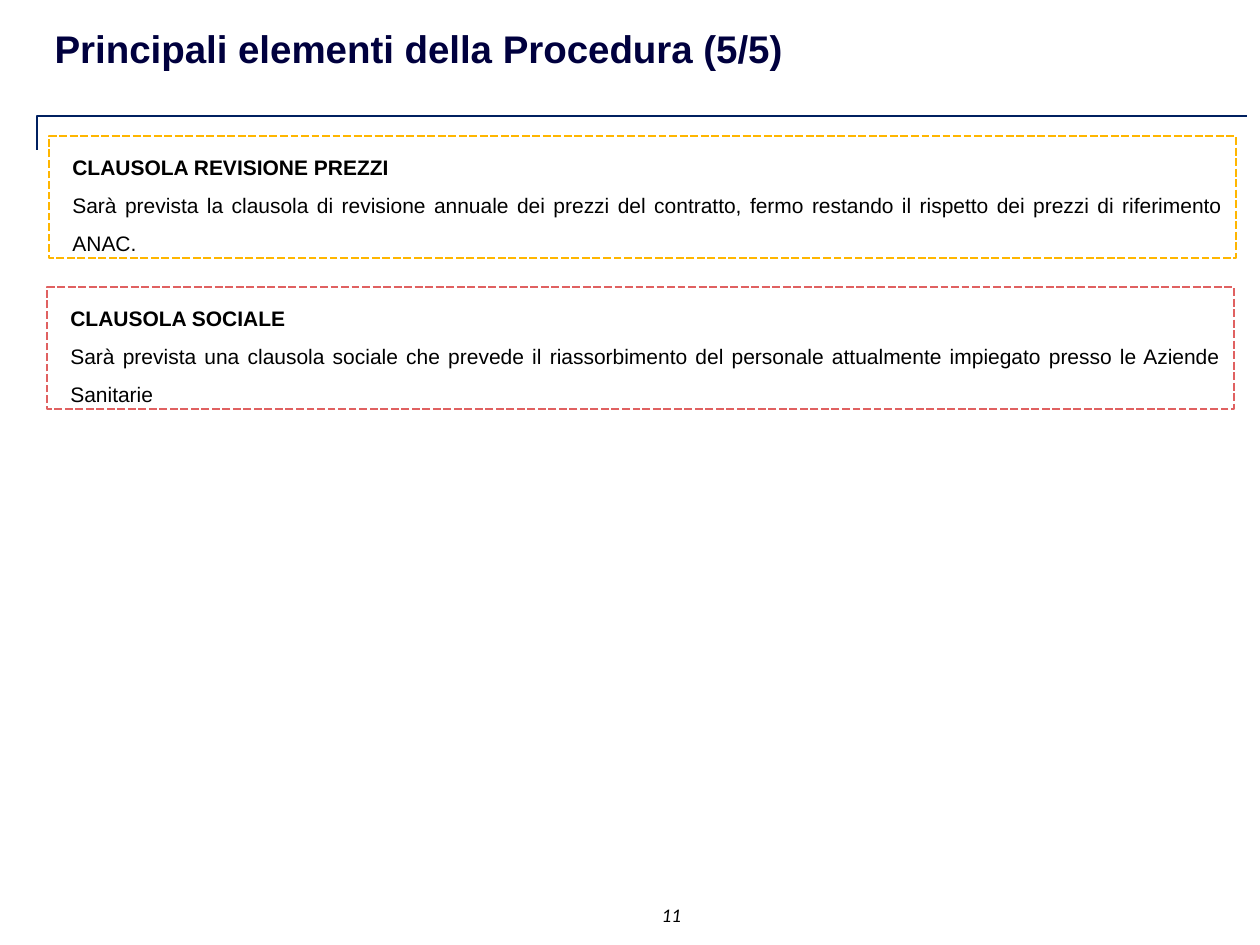
"""Build the slide on the price revision and social clauses of the procedure."""
from dataclasses import dataclass

from pptx import Presentation
from pptx.dml.color import RGBColor
from pptx.enum.dml import MSO_LINE
from pptx.enum.shapes import MSO_SHAPE
from pptx.enum.text import MSO_ANCHOR, MSO_AUTO_SIZE, PP_ALIGN
from pptx.util import Emu, Pt

PX_PER_INCH = 126


@dataclass(frozen=True)
class Theme:
    title: str = "00003E"
    text: str = "000000"
    rule: str = "002060"
    price: str = "FFB600"
    social: str = "E06161"
    title_size: int = 22
    body_size: int = 12
    number_size: int = 11
    body_font: str = "Arial"
    number_font: str = "Calibri"


THEME = Theme()


def px(length):
    return Emu(round(length * 914400 / PX_PER_INCH))


def place(shape, left, top, width, height):
    shape.left, shape.top = px(left), px(top)
    shape.width, shape.height = px(width), px(height)


def format_font(font, name, size, color, bold=False, italic=False):
    font.name, font.size = name, Pt(size)
    font.bold, font.italic = bold, italic
    font.color.rgb = RGBColor.from_string(color)


def add_title(slide, text):
    title = slide.shapes.title
    place(title, 42, 19, 764, 59)
    frame = title.text_frame
    frame.text = text
    frame.word_wrap = False
    frame.auto_size = MSO_AUTO_SIZE.NONE
    frame.vertical_anchor = MSO_ANCHOR.TOP
    paragraph = frame.paragraphs[0]
    paragraph.alignment = PP_ALIGN.LEFT
    format_font(paragraph.runs[0].font, THEME.body_font, THEME.title_size, THEME.title, bold=True)


def add_corner_rule(slide):
    builder = slide.shapes.build_freeform(px(37), px(150))
    builder.add_line_segments([(px(37), px(116)), (px(1247), px(116))], close=False)
    rule = builder.convert_to_shape()
    rule.shadow.inherit = False
    rule.fill.background()
    rule.line.color.rgb = RGBColor.from_string(THEME.rule)
    rule.line.width = Pt(1)


def add_clause(slide, left, top, color, heading, body):
    box = slide.shapes.add_shape(MSO_SHAPE.RECTANGLE, px(left), px(top), px(1187), px(122))
    box.shadow.inherit = False
    box.fill.background()
    box.line.color.rgb = RGBColor.from_string(color)
    box.line.width = Pt(1.5)
    box.line.dash_style = MSO_LINE.SQUARE_DOT
    frame = box.text_frame
    frame.text = f"{heading}\n{body}"
    frame.word_wrap = True
    frame.vertical_anchor = MSO_ANCHOR.TOP
    for paragraph, bold in zip(frame.paragraphs, (True, False)):
        paragraph.alignment = PP_ALIGN.JUSTIFY
        paragraph.line_spacing = 1.5
        paragraph._p.get_or_add_pPr().set("marL", str(px(11)))
        format_font(paragraph.runs[0].font, THEME.body_font, THEME.body_size, THEME.text, bold)


def add_page_number(slide, text):
    frame = slide.shapes.add_textbox(px(635), px(903), px(73), px(24)).text_frame
    frame.margin_left = frame.margin_right = frame.margin_top = frame.margin_bottom = 0
    frame.word_wrap = True
    frame.text = text
    paragraph = frame.paragraphs[0]
    paragraph.alignment = PP_ALIGN.CENTER
    format_font(paragraph.runs[0].font, THEME.number_font, THEME.number_size, THEME.text, italic=True)


def main():
    presentation = Presentation()
    presentation.slide_width, presentation.slide_height = px(1260), px(945)
    slide = presentation.slides.add_slide(presentation.slide_layouts[5])
    add_title(slide, "Principali elementi della Procedura (5/5)")
    add_corner_rule(slide)
    add_clause(slide, 49, 136, THEME.price, "CLAUSOLA REVISIONE PREZZI",
               "Sarà prevista la clausola di revisione annuale dei prezzi del contratto, "
               "fermo restando il rispetto dei prezzi di riferimento ANAC.")
    add_clause(slide, 47, 287, THEME.social, "CLAUSOLA SOCIALE",
               "Sarà prevista una clausola sociale che prevede il riassorbimento del personale "
               "attualmente impiegato presso le Aziende Sanitarie")
    add_page_number(slide, "11")
    presentation.save("out.pptx")


if __name__ == "__main__":
    main()
